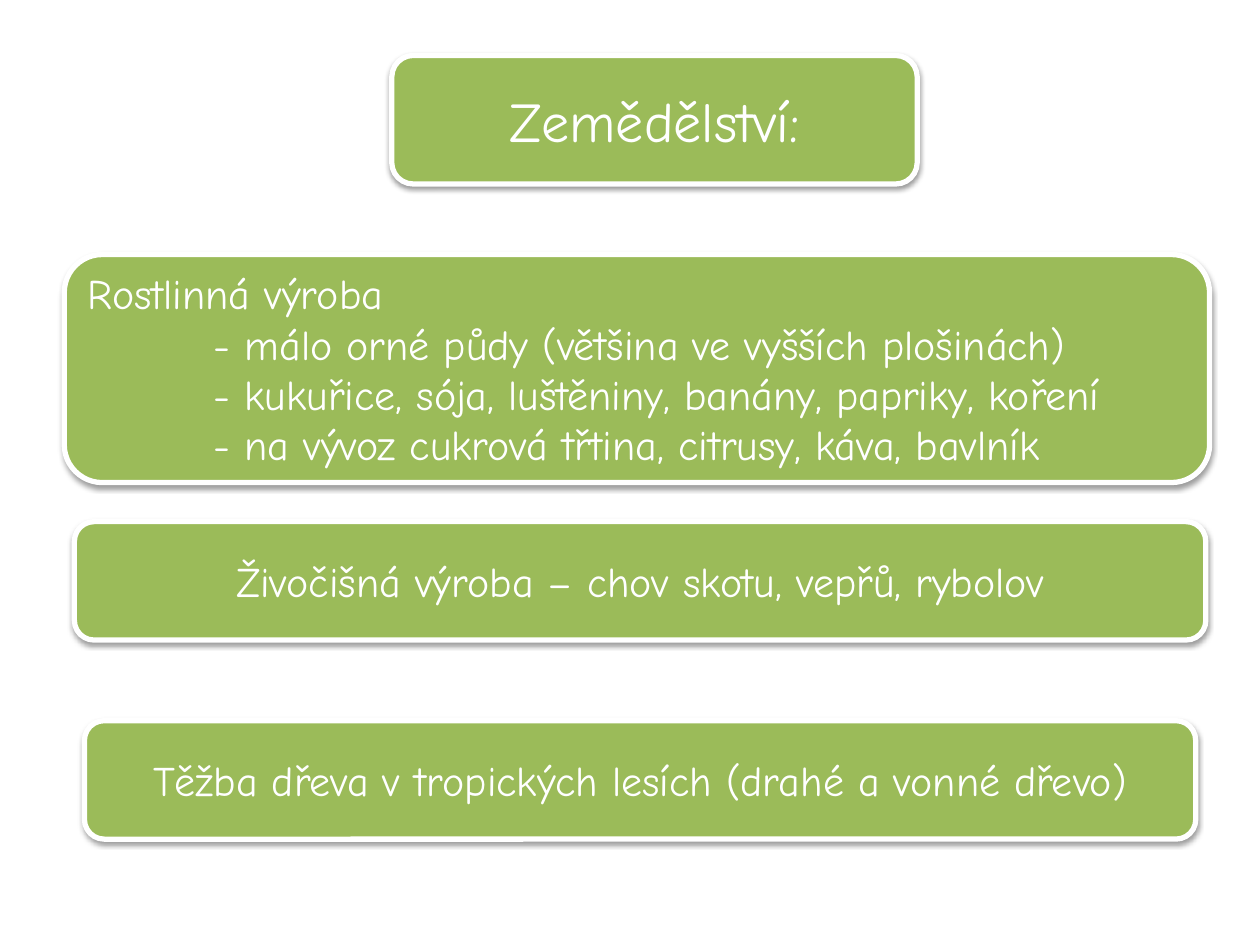
from lxml.etree import SubElement
from pptx import Presentation
from pptx.dml.color import RGBColor
from pptx.enum.shapes import MSO_SHAPE as Shape
from pptx.enum.text import MSO_ANCHOR as Anchor, PP_ALIGN as Align
from pptx.oxml.ns import qn
from pptx.util import Inches, Pt

FONT = "Comic Neue"
GREEN, WHITE, BLACK = "9BBB59", "FFFFFF", "000000"

PANELS = [
    {"at": (0.59, 4.14, 8.98, 0.94), "size": 24, "align": Align.CENTER,
     "lines": [(0, "Živočišná výroba – chov skotu, vepřů, rybolov")]},
    {"at": (3.11, 0.44, 4.17, 1.02), "size": 32, "align": Align.CENTER,
     "lines": [(0, "Zemědělství:")]},
    {"at": (0.51, 2.02, 9.09, 1.81), "size": 24, "align": Align.LEFT,
     "lines": [
         (0, "Rostlinná výroba"),
         (1, "- málo orné půdy (většina ve vyšších plošinách)"),
         (1, "- kukuřice, sója, luštěniny, banány, papriky, koření"),
         (1, "- na vývoz cukrová třtina, citrusy, káva, bavlník"),
     ]},
    {"at": (0.67, 5.72, 8.82, 0.94), "size": 24, "align": Align.CENTER,
     "lines": [(0, "Těžba dřeva v tropických lesích (drahé a vonné dřevo)")]},
]


def color(value):
    return RGBColor.from_string(value)


def add_shadow(shape):
    shape.shadow.inherit = False
    effects = shape._element.spPr.find(qn("a:effectLst"))
    shadow = SubElement(effects, qn("a:outerShdw"), blurRad=str(Pt(3.1)),
                        dist=str(Pt(1.6)), dir="5400000", rotWithShape="0")
    tint = SubElement(shadow, qn("a:srgbClr"), val=BLACK)
    SubElement(tint, qn("a:alpha"), val="38000")


def add_panel(page, at, size, align, lines):
    panel = page.shapes.add_shape(Shape.ROUNDED_RECTANGLE, *map(Inches, at))
    panel.fill.solid()
    panel.fill.fore_color.rgb = color(GREEN)
    panel.line.color.rgb = color(WHITE)
    panel.line.width = Pt(3)
    add_shadow(panel)

    box = panel.text_frame
    box.word_wrap = True
    box.vertical_anchor = Anchor.MIDDLE
    for index, (indent, text) in enumerate(lines):
        para = box.add_paragraph() if index else box.paragraphs[0]
        para.alignment = align
        if indent:
            para._p.get_or_add_pPr().set("marL", str(Inches(indent)))
        span = para.add_run()
        span.text = text
        span.font.name = FONT
        span.font.size = Pt(size)
        span.font.color.rgb = color(WHITE)


def main():
    deck = Presentation()
    deck.slide_width, deck.slide_height = Inches(10), Inches(7.5)
    page = deck.slides.add_slide(deck.slide_layouts[6])
    for panel in PANELS:
        add_panel(page, **panel)
    deck.save("out.pptx")


if __name__ == "__main__":
    main()
